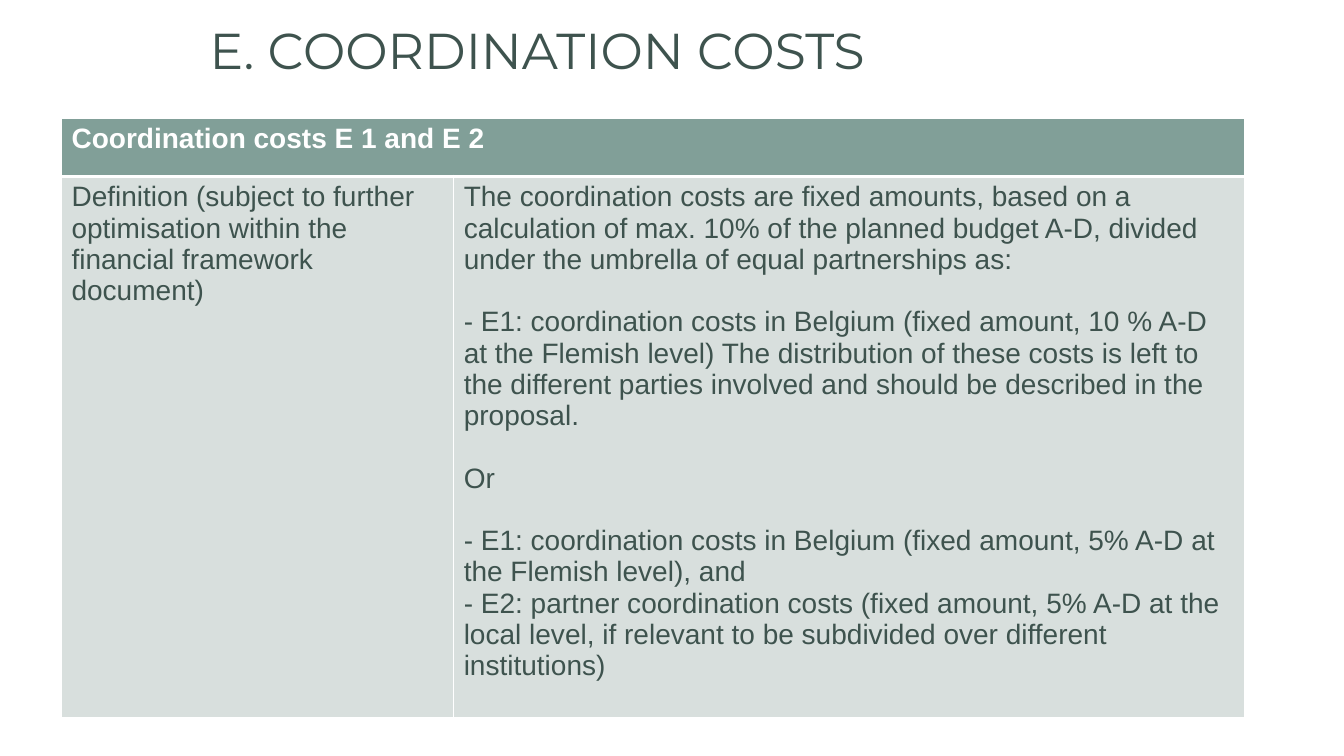
from lxml.etree import SubElement
from pptx import Presentation
from pptx.dml.color import RGBColor
from pptx.enum.text import MSO_ANCHOR
from pptx.oxml.ns import qn
from pptx.util import Inches, Pt

TITLE = "E. COORDINATION COSTS"
HEAD = "Coordination costs E 1 and E 2"
TERM = "Definition (subject to further optimisation within the financial framework document)"
RULES = [
    ("The coordination costs are fixed amounts, based on a calculation of max. 10% of the planned budget A-D, divided under the umbrella of equal partnerships as:", 0),
    ("- E1: coordination costs in Belgium (fixed amount, 10 % A-D at the Flemish level) The distribution of these costs is left to the different parties involved and should be described in the proposal.", 1),
    ("Or", 1),
    ("- E1: coordination costs in Belgium (fixed amount, 5% A-D at the Flemish level), and", 1),
    ("- E2: partner coordination costs (fixed amount, 5% A-D at the local level, if relevant to be subdivided over different institutions)", 0),
]
HUES = {"ink": "3E534E", "head": "819F98", "body": "D8DFDD", "white": "FFFFFF"}
WIDE, HIGH = 13.33, 7.5
COLS, ROWS = (3.89, 7.84), (0.58, 5.05)
LEFT, TOP = 0.61, 1.17
GAP = 22.4
EDGES = {"a:lnL": 1, "a:lnR": 1, "a:lnT": 1, "a:lnB": 1}
BODY = {"name": "Arial", "size": Pt(20), "bold": False}
BOLD = {**BODY, "bold": True}
LARGE = {"name": "Montserrat", "size": Pt(36), "bold": False}


def hue(key):
    return RGBColor.from_string(HUES[key])


def write(frame, lines, form, ink):
    for num, (text, gap) in enumerate(lines):
        para = frame.add_paragraph() if num else frame.paragraphs[0]
        para.space_before = Pt(gap * GAP)
        run = para.add_run()
        run.text = text
        for key, val in form.items():
            setattr(run.font, key, val)
        run.font.color.rgb = hue(ink)


def paint(cell, fill, edges):
    props = cell._tc.get_or_add_tcPr()
    for tag, size in edges.items():
        line = SubElement(props, qn(tag), w=str(Pt(size)))
        solid = SubElement(line, qn("a:solidFill"))
        SubElement(solid, qn("a:srgbClr"), val=HUES["white"])
    cell.fill.solid()
    cell.fill.fore_color.rgb = hue(fill)


def main():
    deck = Presentation()
    deck.slide_width, deck.slide_height = Inches(WIDE), Inches(HIGH)
    slide = deck.slides.add_slide(deck.slide_layouts[6])

    box = slide.shapes.add_textbox(Inches(1.98), Inches(0.21), Inches(9), Inches(0.76))
    frame = box.text_frame
    frame.word_wrap = True
    frame.vertical_anchor = MSO_ANCHOR.TOP
    write(frame, [(TITLE, 0)], LARGE, "ink")
    frame.paragraphs[0].line_spacing = 0.9

    size = [Inches(n) for n in (LEFT, TOP, sum(COLS), sum(ROWS))]
    table = slide.shapes.add_table(len(ROWS), len(COLS), *size).table
    table.horz_banding = False
    for col, width in zip(table.columns, COLS):
        col.width = Inches(width)
    for row, height in zip(table.rows, ROWS):
        row.height = Inches(height)
    for cell in table.iter_cells():
        top = cell in list(table.rows[0].cells)
        edge = "a:lnB" if top else "a:lnT"
        paint(cell, "head" if top else "body", {**EDGES, edge: 3})
    table.cell(0, 0).merge(table.cell(0, 1))
    write(table.cell(0, 0).text_frame, [(HEAD, 0)], BOLD, "white")
    write(table.cell(1, 0).text_frame, [(TERM, 0)], BODY, "ink")
    write(table.cell(1, 1).text_frame, RULES, BODY, "ink")

    deck.save("out.pptx")


if __name__ == "__main__":
    main()
